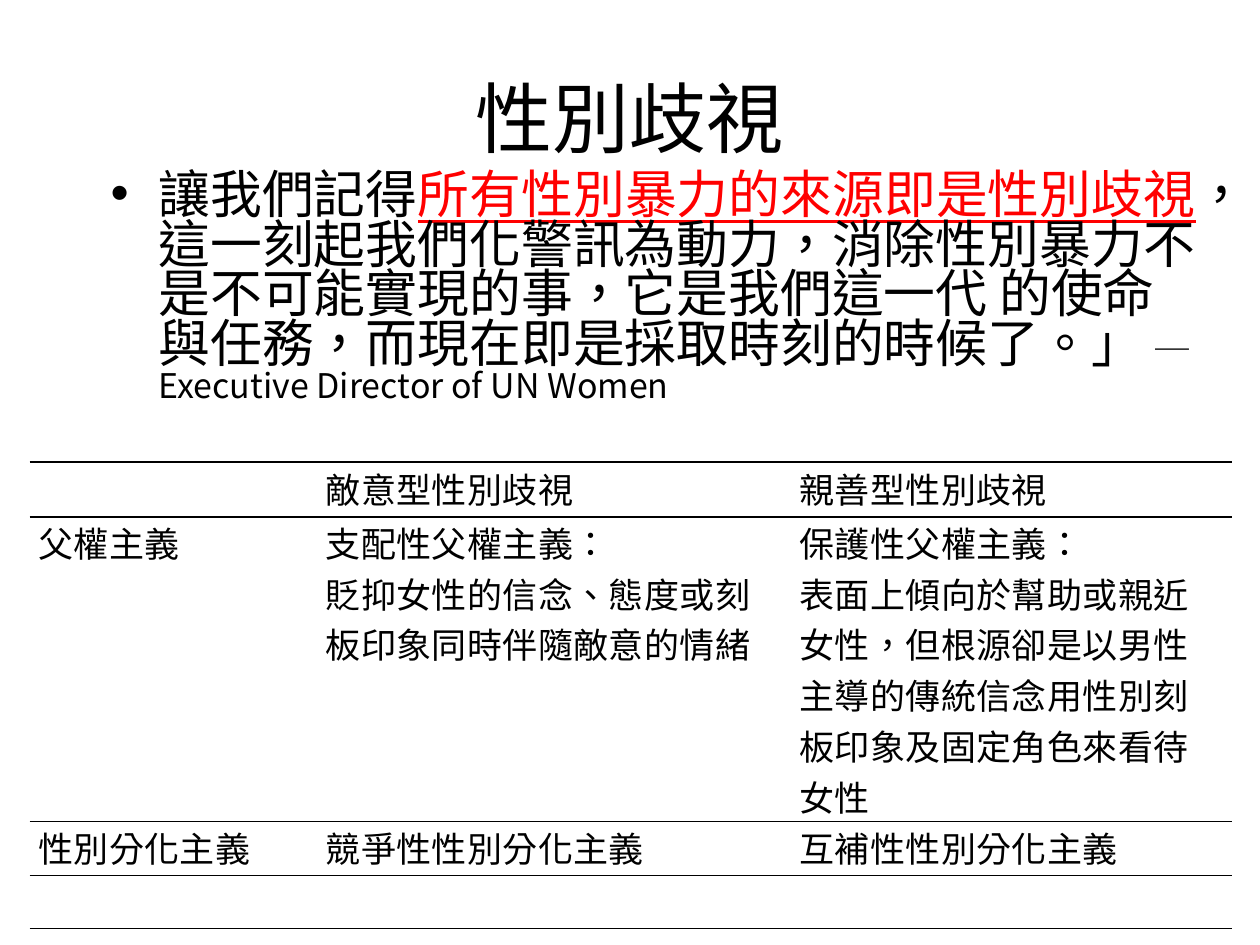
from lxml import etree
from pptx import Presentation
from pptx.dml.color import RGBColor
from pptx.enum.text import MSO_ANCHOR, PP_ALIGN
from pptx.oxml.ns import qn
from pptx.util import Inches, Pt

CENTER = PP_ALIGN.CENTER
MIDDLE = MSO_ANCHOR.MIDDLE
COLORS = {"text": "000000", "accent": "FF0000"}
FONTS = {"title": "Calibri", "quote": "Noto Sans CJK SC", "table": "Times New Roman"}

# The slide is a grid of 100 columns by 75 rows of square units.
GRID_COLUMNS, GRID_ROWS = 100, 75
GRID_UNIT = Inches(0.1)

QUOTE_SIZE, SOURCE_SIZE = 29.6, 19.4
QUOTE_INDENT = 3.8
QUOTE = [
    ("讓我們記得", QUOTE_SIZE, "text"),
    ("所有性別暴力的來源即是性別歧視", QUOTE_SIZE, "accent"),
    ("，這一刻起我們化警訊為動力，消除性別暴力不是不可能實現的事，"
     "它是我們這一代 的使命與任務，而現在即是採取時刻的時候了。」 ", QUOTE_SIZE, "text"),
    ("─ Executive Director of UN Women", SOURCE_SIZE, "text"),
]

COLUMN_WIDTHS = [22.8, 37.6, 35]
ROW_HEIGHTS = [4.3, 24.2, 4.3, 4.2]
RULE_WIDTHS = [1.25, 1.25, 1, 1, 1.25]
ROWS = [
    ["", "敵意型性別歧視", "親善型性別歧視"],
    ["父權主義",
     "支配性父權主義：\n貶抑女性的信念、態度或刻板印象同時伴隨敵意的情緒",
     "保護性父權主義：\n表面上傾向於幫助或親近女性，但根源卻是以男性主導的"
     "傳統信念用性別刻板印象及固定角色來看待女性"],
    ["性別分化主義", "競爭性性別分化主義", "互補性性別分化主義"],
    ["", "", ""],
]


def units(count):
    return round(count * GRID_UNIT)


def add_run(paragraph, text, font_name, size, color="text"):
    run = paragraph.add_run()
    run.text = text
    run.font.name = font_name
    run.font.size = Pt(size)
    run.font.color.rgb = RGBColor.from_string(COLORS[color])
    run.font._element.set("lang", "zh-TW")
    return run


def add_text_frame(slide, box):
    text_frame = slide.shapes.add_textbox(*map(units, box)).text_frame
    text_frame.word_wrap = True
    return text_frame


def add_title(slide, box):
    text_frame = add_text_frame(slide, box)
    text_frame.vertical_anchor = MIDDLE
    paragraph = text_frame.paragraphs[0]
    paragraph.alignment = CENTER
    add_run(paragraph, "性別歧視", FONTS["title"], 44)


def add_quote(slide, box):
    paragraph = add_text_frame(slide, box).paragraphs[0]
    paragraph.line_spacing = 0.8
    properties = paragraph._p.get_or_add_pPr()
    properties.set("marL", str(units(QUOTE_INDENT)))
    properties.set("indent", str(-units(QUOTE_INDENT)))
    etree.SubElement(properties, qn("a:buFont"), typeface="Arial")
    etree.SubElement(properties, qn("a:buChar"), char="•")
    for text, size, color in QUOTE:
        run = add_run(paragraph, text, FONTS["quote"], size, color)
        run.font.underline = color == "accent"


def set_borders(cell, top, bottom):
    """Rule the cell above and below, and leave its sides open."""
    properties = cell._tc.get_or_add_tcPr()
    for position, (side, width) in enumerate(
            [("lnL", 0), ("lnR", 0), ("lnT", top), ("lnB", bottom)]):
        line = etree.Element(qn(f"a:{side}"), w=str(Pt(width)))
        if width:
            fill = etree.SubElement(line, qn("a:solidFill"))
            etree.SubElement(fill, qn("a:srgbClr"), val=COLORS["text"])
        else:
            etree.SubElement(line, qn("a:noFill"))
        properties.insert(position, line)


def fill_cell(cell, text):
    cell.margin_left = cell.margin_right = units(0.7)
    cell.margin_top = cell.margin_bottom = 0
    cell.fill.background()
    if not text:
        return
    text_frame = cell.text_frame
    for index, line in enumerate(text.split("\n")):
        paragraph = text_frame.add_paragraph() if index else text_frame.paragraphs[0]
        run = add_run(paragraph, line, FONTS["table"], 20)
        run.font._element.set("spc", "20")


def add_comparison(slide, left, top):
    """Place the table of hostile and benevolent sexism."""
    box = (left, top, sum(COLUMN_WIDTHS), sum(ROW_HEIGHTS))
    table = slide.shapes.add_table(
        len(ROWS), len(COLUMN_WIDTHS), *map(units, box)).table
    table.first_row = table.horz_banding = False
    for column, width in zip(table.columns, COLUMN_WIDTHS):
        column.width = units(width)
    for row_index, (row, height) in enumerate(zip(table.rows, ROW_HEIGHTS)):
        row.height = units(height)
        for cell, text in zip(row.cells, ROWS[row_index]):
            fill_cell(cell, text)
            set_borders(cell, RULE_WIDTHS[row_index], RULE_WIDTHS[row_index + 1])


def main():
    presentation = Presentation()
    presentation.slide_width = units(GRID_COLUMNS)
    presentation.slide_height = units(GRID_ROWS)
    slide = presentation.slides.add_slide(presentation.slide_layouts[6])
    add_title(slide, (5, 3, 90, 12.5))
    add_comparison(slide, 2.35, 36.7)
    add_quote(slide, (7.8, 13.3, 88.3, 23.4))
    presentation.save("out.pptx")


if __name__ == "__main__":
    main()
